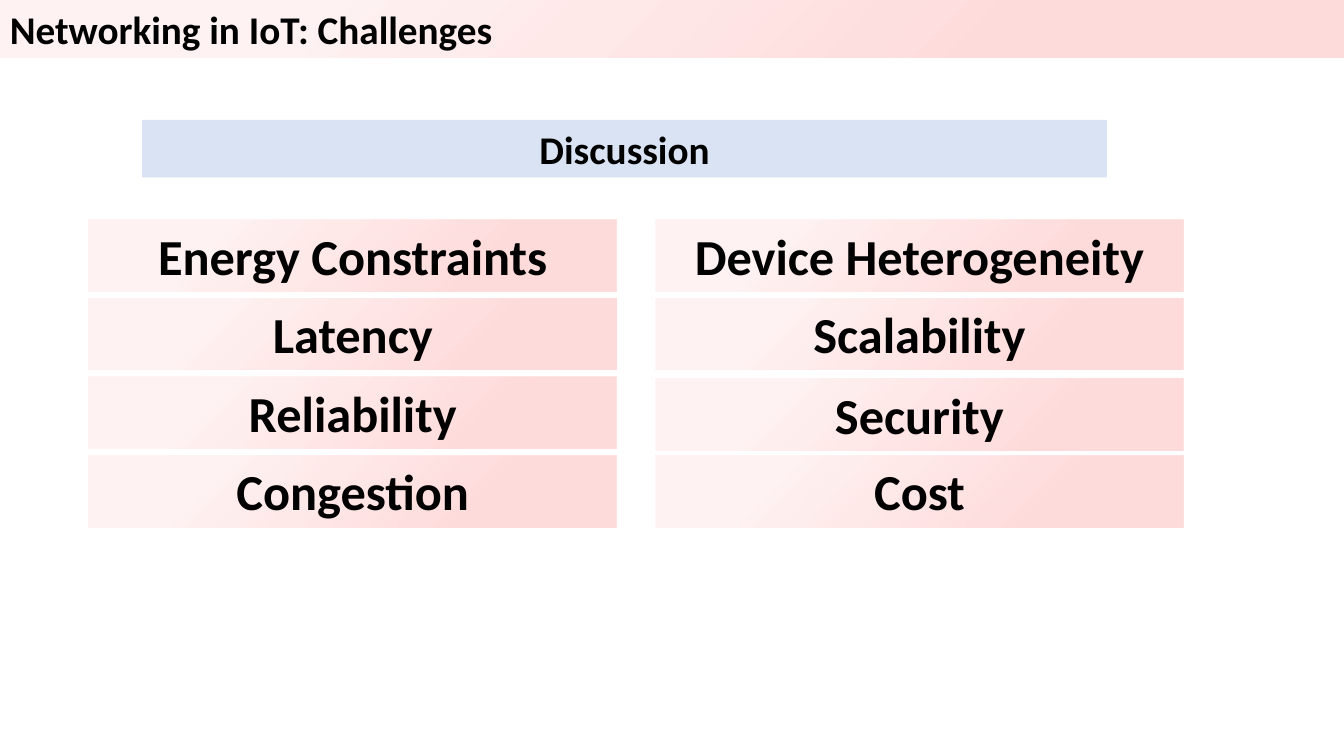
from pptx import Presentation
from pptx.dml.color import RGBColor
from pptx.enum.shapes import MSO_SHAPE as Shape
from pptx.enum.text import MSO_ANCHOR as Anchor, MSO_AUTO_SIZE as AutoSize, PP_ALIGN as Align
from pptx.oxml import parse_xml
from pptx.oxml.ns import nsdecls, qn
from pptx.util import Emu, Pt

PX = 9144
WIDTH, HEIGHT = 1333, 750
BLACK = RGBColor(0x00, 0x00, 0x00)
RED = RGBColor(0xFF, 0x00, 0x00)
PALE_BLUE = RGBColor(0xDA, 0xE3, 0xF3)
GLOW_STOPS = ((26, 14), (76, 5))
FONT = {"name": "Calibri", "bold": True}
FRAME = {"word_wrap": True, "auto_size": AutoSize.SHAPE_TO_FIT_TEXT, "vertical_anchor": Anchor.TOP}
CHALLENGES = (
    (0, (("Energy Constraints", 0), ("Latency", 78), ("Reliability", 156), ("Congestion", 234))),
    (562, (("Device Heterogeneity", 0), ("Scalability", 78), ("Security", 158), ("Cost", 234))),
)


def set_all(target, values):
    """Set each named attribute of the target."""
    for name, value in values.items():
        setattr(target, name, value)


def glow(box):
    """Fill the box with a translucent red that spreads from its lower right corner."""
    stops = "".join(
        f'<a:gs pos="{place * 1000}"><a:srgbClr val="{RED}">'
        f'<a:alpha val="{alpha * 1000}"/></a:srgbClr></a:gs>'
        for place, alpha in GLOW_STOPS
    )
    gradient = parse_xml(
        f'<a:gradFill {nsdecls("a")} rotWithShape="1"><a:gsLst>{stops}</a:gsLst>'
        '<a:path path="circle"><a:fillToRect l="100000" t="100000"/></a:path>'
        '<a:tileRect r="-100000" b="-100000"/></a:gradFill>'
    )
    properties = box._element.spPr
    properties.replace(properties.find(qn("a:solidFill")), gradient)


def add_bar(page, area, text, size, align=Align.CENTER, color=None):
    """Add a bold text bar, plain when a color is given and glowing otherwise."""
    box = page.shapes.add_shape(Shape.RECTANGLE, *(Emu(length * PX) for length in area))
    box.shadow.inherit = False
    box.line.fill.background()
    box.fill.solid()
    box.fill.fore_color.rgb = color or RED
    if color is None:
        glow(box)
    set_all(box.text_frame, FRAME)
    para = box.text_frame.paragraphs[0]
    para.alignment = align
    span = para.add_run()
    span.text = text
    set_all(span.font, {**FONT, "size": Pt(size)})
    span.font.color.rgb = BLACK


def add_challenges(page, left, top):
    """Add the two columns of challenges from the given corner."""
    for shift, column in CHALLENGES:
        for text, drop in column:
            add_bar(page, (left + shift, top + drop, 524, 71), text, 36)


def main():
    """Build and save the slide."""
    deck = Presentation()
    set_all(deck, {"slide_width": Emu(WIDTH * PX), "slide_height": Emu(HEIGHT * PX)})
    page = deck.slides.add_slide(deck.slide_layouts[6])
    add_bar(page, (0, 0, WIDTH, 57), "Networking in IoT: Challenges", 28, Align.LEFT)
    add_challenges(page, 88, 218)
    add_bar(page, (141, 119, 957, 57), "Discussion", 28, color=PALE_BLUE)
    deck.save("out.pptx")


if __name__ == "__main__":
    main()
